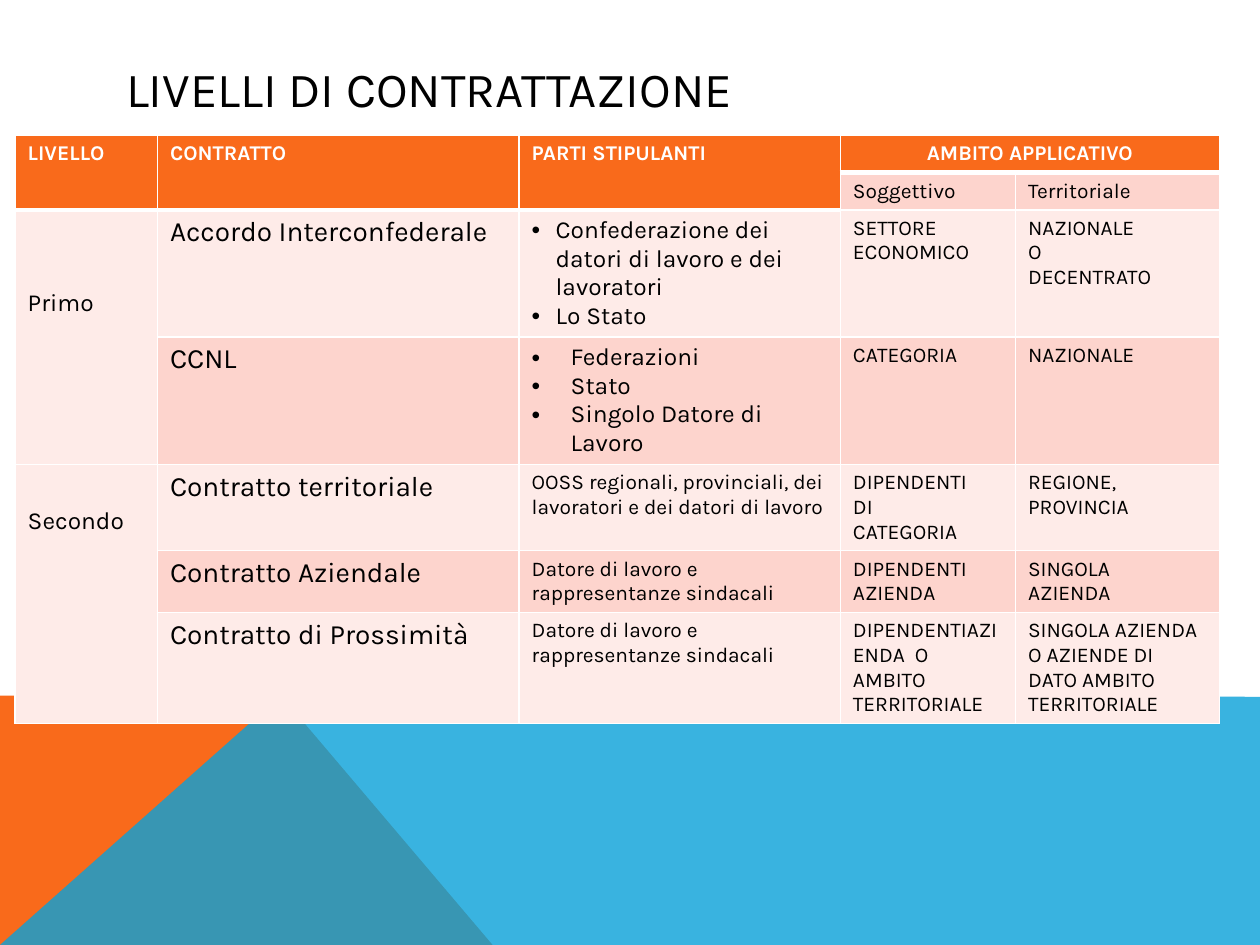
from pptx import Presentation
from pptx.dml.color import RGBColor
from pptx.enum.text import MSO_ANCHOR, PP_ALIGN
from pptx.oxml.ns import qn
from pptx.util import Inches, Pt
from lxml.etree import SubElement

FONT = "Karla"
COLORS = {"orange": "F96A1B", "blue": "08A1D9", "pale": "FEEBE8", "pink": "FDD4CD",
          "white": "FFFFFF", "black": "000000"}

TITLE = "LIVELLI DI CONTRATTAZIONE"
HEADERS = ["LIVELLO", "CONTRATTO", "PARTI STIPULANTI", "AMBITO APPLICATIVO"]
SCOPES = ["Soggettivo", "Territoriale"]
# Level name, first row, last row, top margin
LEVELS = [("Primo", 2, 3, 0.63), ("Secondo", 4, 6, 0.34)]
# Contract, parties, bullet indent (0 = plain), subjective scope, territorial scope
CONTRACTS = [
    ("Accordo Interconfederale",
     ["Confederazione dei datori di lavoro e dei lavoratori", "Lo Stato"], 0.19,
     ["SETTORE", "ECONOMICO"], ["NAZIONALE", "O", "DECENTRATO"]),
    ("CCNL", ["Federazioni", "Stato", "Singolo Datore di Lavoro"], 0.31,
     ["CATEGORIA"], ["NAZIONALE"]),
    ("Contratto territoriale",
     ["OOSS regionali, provinciali, dei lavoratori e dei datori di lavoro"], 0,
     ["DIPENDENTI", "DI", "CATEGORIA"], ["REGIONE, PROVINCIA"]),
    ("Contratto Aziendale", ["Datore di lavoro e rappresentanze sindacali"], 0,
     ["DIPENDENTI", "AZIENDA"], ["SINGOLA", "AZIENDA"]),
    ("Contratto di Prossimità", ["Datore di lavoro e rappresentanze sindacali"], 0,
     ["DIPENDENTIAZIENDA  O", "AMBITO TERRITORIALE"],
     ["SINGOLA AZIENDA O AZIENDE DI DATO AMBITO TERRITORIALE"]),
]
COLUMN_WIDTHS = [1.13, 2.87, 2.55, 1.39, 1.62]
ROW_HEIGHTS = [0.3, 0.29, 1.01, 1.01, 0.68, 0.49, 0.88]

# Outline, colour, opacity in percent
BACKDROP = [
    ([(0, 7.5), (0, 5.52), (2.23, 5.52), (3.91, 7.5)], "orange", 100),
    ([(0, 7.5), (2.23, 5.52), (10, 5.53), (10, 7.5)], "blue", 80),
]


def rgb(name):
    return RGBColor.from_string(COLORS[name])


def add_backdrop(slide, outline, color, opacity):
    points = [(Inches(x), Inches(y)) for x, y in outline]
    builder = slide.shapes.build_freeform(*points[0])
    builder.add_line_segments(points[1:], close=True)
    area = builder.convert_to_shape()
    area.shadow.inherit = False
    area.fill.solid()
    area.fill.fore_color.rgb = rgb(color)
    area.line.fill.background()
    if opacity < 100:
        tint = area._element.spPr.find(qn("a:solidFill"))[0]
        SubElement(tint, qn("a:alpha"), val=str(opacity * 1000))


def add_text(paragraph, text, size, color="black", bold=False):
    run = paragraph.add_run()
    run.text = text
    run.font.name = FONT
    run.font.size = Pt(size)
    run.font.bold = bold
    run.font.color.rgb = rgb(color)


def write(cell, lines, size, color="black", bold=False, indent=0):
    frame = cell.text_frame
    for number, line in enumerate(lines):
        paragraph = frame.add_paragraph() if number else frame.paragraphs[0]
        add_text(paragraph, line, size, color, bold)
        if indent:
            properties = paragraph._p.get_or_add_pPr()
            properties.set("marL", str(Inches(indent)))
            properties.set("indent", str(-Inches(indent)))
            SubElement(properties, qn("a:buFont"), typeface="Arial")
            SubElement(properties, qn("a:buChar"), char="•")


def style_cell(cell, row, column):
    """Give the cell its white borders, thick under the header, and its fill."""
    header = row == 0 or (row == 1 and column < 3)
    widths = {"lnL": 1, "lnR": 1, "lnT": 1, "lnB": 3 if header else 1}
    if row:
        del widths["lnT"]
    properties = cell._tc.get_or_add_tcPr()
    for side, width in widths.items():
        border = SubElement(properties, qn(f"a:{side}"), w=str(Pt(width)))
        SubElement(SubElement(border, qn("a:solidFill")), qn("a:srgbClr"), val=COLORS["white"])
    fill = "orange" if header else "pink" if row % 2 and column else "pale"
    cell.fill.solid()
    cell.fill.fore_color.rgb = rgb(fill)


def add_contract_table(slide):
    table = slide.shapes.add_table(
        len(ROW_HEIGHTS), len(COLUMN_WIDTHS), Inches(0.12), Inches(1.07),
        Inches(sum(COLUMN_WIDTHS)), Inches(sum(ROW_HEIGHTS))).table
    for column, width in zip(table.columns, COLUMN_WIDTHS):
        column.width = Inches(width)
    for row, height in zip(table.rows, ROW_HEIGHTS):
        row.height = Inches(height)
    for row in range(len(ROW_HEIGHTS)):
        for column in range(len(COLUMN_WIDTHS)):
            style_cell(table.cell(row, column), row, column)

    for column, header in enumerate(HEADERS):
        cell = table.cell(0, column)
        cell.merge(table.cell(1, column) if column < 3 else table.cell(0, 4))
        write(cell, [header], 12, "white", bold=True)
    table.cell(0, 3).text_frame.paragraphs[0].alignment = PP_ALIGN.CENTER
    for column, scope in enumerate(SCOPES, start=3):
        write(table.cell(1, column), [scope], 12)

    for level, first, last, margin in LEVELS:
        cell = table.cell(first, 0)
        cell.merge(table.cell(last, 0))
        cell.margin_top = Inches(margin)
        write(cell, [level], 14)
    for row, (contract, parties, indent, subjects, territory) in enumerate(CONTRACTS, start=2):
        write(table.cell(row, 1), [contract], 16)
        write(table.cell(row, 2), parties, 14 if indent else 12, indent=indent)
        write(table.cell(row, 3), subjects, 12)
        write(table.cell(row, 4), territory, 12)


def main():
    presentation = Presentation()
    presentation.slide_width, presentation.slide_height = Inches(10), Inches(7.5)
    slide = presentation.slides.add_slide(presentation.slide_layouts[5])
    for outline, color, opacity in BACKDROP:
        add_backdrop(slide, outline, color, opacity)

    title = slide.shapes.title
    title.left, title.top, title.width, title.height = map(Inches, (0.9, 0.4, 8.22, 0.6))
    title.text_frame.vertical_anchor = MSO_ANCHOR.MIDDLE
    heading = title.text_frame.paragraphs[0]
    heading.alignment = PP_ALIGN.LEFT
    add_text(heading, TITLE, 28)

    add_contract_table(slide)
    presentation.save("out.pptx")


if __name__ == "__main__":
    main()
